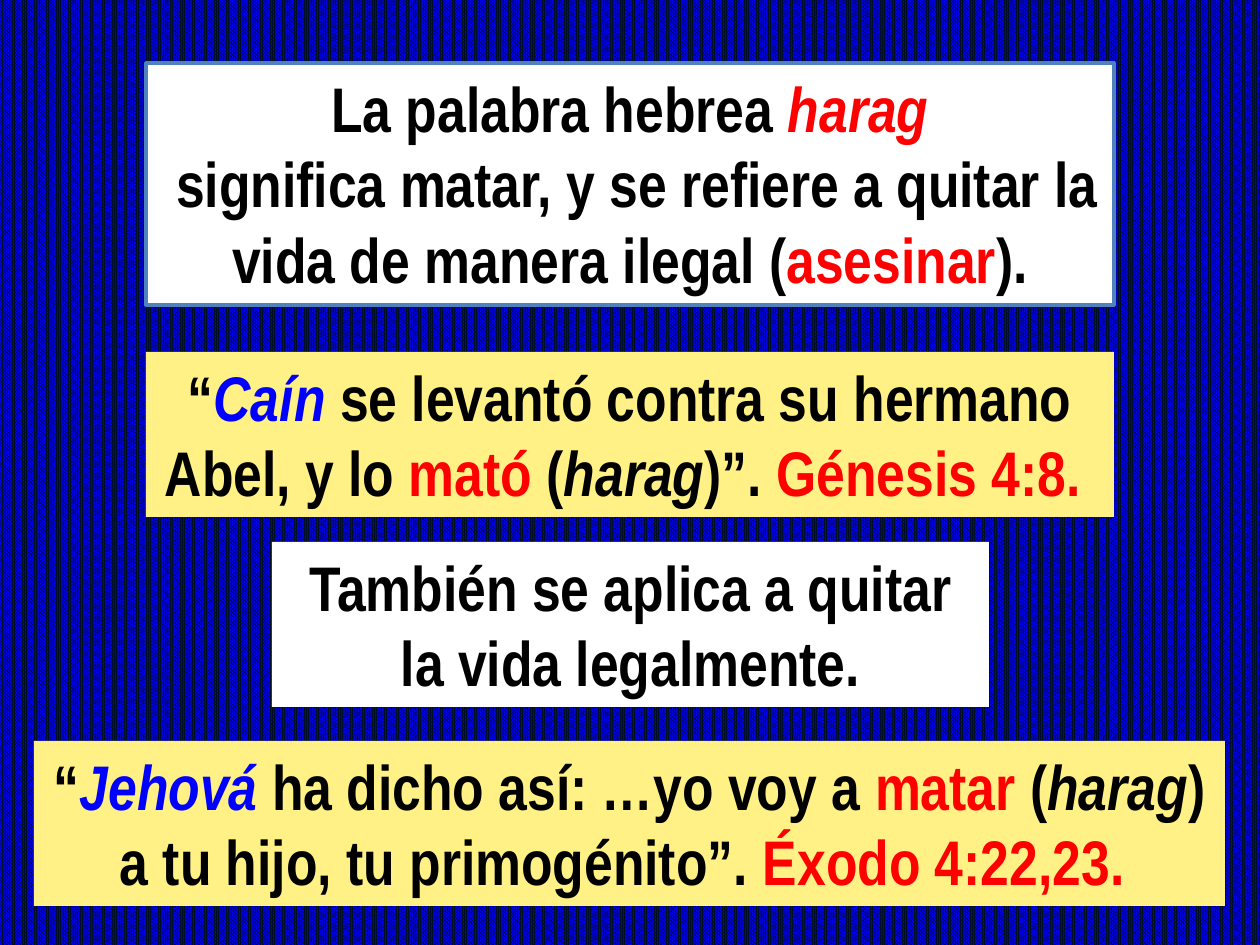
from lxml.etree import SubElement as Sub
from pptx import Presentation
from pptx.dml.color import RGBColor
from pptx.enum.dml import MSO_PATTERN as Pat
from pptx.enum.shapes import MSO_SHAPE as Shape
from pptx.enum.text import MSO_ANCHOR as Anchor, MSO_AUTO_SIZE as Auto, PP_ALIGN as Align
from pptx.oxml.ns import qn
from pptx.util import Emu, Pt

BLACK, RED, BLUE = "000000", "FF0000", "0000FF"
WHITE, CREAM, EDGE = "FFFFFF", "FFF185", "4F81BD"

BOXES = [
    ((146, 63, 968, 242), WHITE, EDGE, [
        [("La palabra hebrea ", BLACK, False), ("harag", RED, True)],
        [(" significa matar, y se refiere a quitar la vida de manera ilegal (", BLACK, False),
         ("asesinar", RED, False), (").", BLACK, False)],
    ]),
    ((34, 741, 1191, 165), CREAM, None, [
        [("“", BLACK, False), ("Jehová ", BLUE, True),
         ("ha dicho así: …yo voy a ", BLACK, False), ("matar ", RED, False),
         ("(", BLACK, False), ("harag", BLACK, True),
         (") a tu hijo, tu primogénito”. ", BLACK, False),
         ("Éxodo 4:22,23. ", RED, False)],
    ]),
    ((146, 352, 968, 165), CREAM, None, [
        [("“", BLACK, False), ("Caín ", BLUE, True),
         ("se levantó contra su hermano Abel, y lo ", BLACK, False),
         ("mató ", RED, False), ("(", BLACK, False), ("harag", BLACK, True),
         (")”. ", BLACK, False), ("Génesis 4:8. ", RED, False)],
    ]),
    ((272, 542, 717, 165), WHITE, None, [
        [("También se aplica a quitar la vida legalmente.", BLACK, False)],
    ]),
]


def px(n):
    return Emu(round(n * 914400 / 126))


def rgb(code):
    return RGBColor.from_string(code)


def add_run(para, text, color, slant):
    run = para.add_run()
    run.text = text
    run.font.color.rgb = rgb(color)
    run.font.italic = slant
    props = run.font._element
    line = Sub(props, qn("a:ln"), w=str(Pt(0.75)))
    Sub(Sub(line, qn("a:solidFill")), qn("a:srgbClr"), val=color)
    props.insert(0, line)


def add_box(slide, place, fill, edge, paras):
    box = slide.shapes.add_shape(Shape.RECTANGLE, *map(px, place))
    box.shadow.inherit = False
    box.fill.solid()
    box.fill.fore_color.rgb = rgb(fill)
    if edge:
        box.line.color.rgb = rgb(edge)
        box.line.width = Pt(2)
    else:
        box.line.fill.background()
    frame = box.text_frame
    frame.word_wrap = True
    frame.auto_size = Auto.SHAPE_TO_FIT_TEXT
    frame.vertical_anchor = Anchor.TOP
    for i, runs in enumerate(paras):
        para = frame.add_paragraph() if i else frame.paragraphs[0]
        para.alignment = Align.CENTER
        para.font.name = "Arial Narrow"
        para.font.size = Pt(36)
        para.font.bold = True
        for run in runs:
            add_run(para, *run)


def main():
    deck = Presentation()
    deck.slide_width, deck.slide_height = px(1260), px(945)
    slide = deck.slides.add_slide(deck.slide_layouts[6])
    back = slide.background.fill
    back.patterned()
    back.pattern = Pat.PERCENT_90
    back.fore_color.rgb = rgb("000D26")
    back.back_color.rgb = rgb(BLUE)
    for box in BOXES:
        add_box(slide, *box)
    deck.save("out.pptx")


if __name__ == "__main__":
    main()
